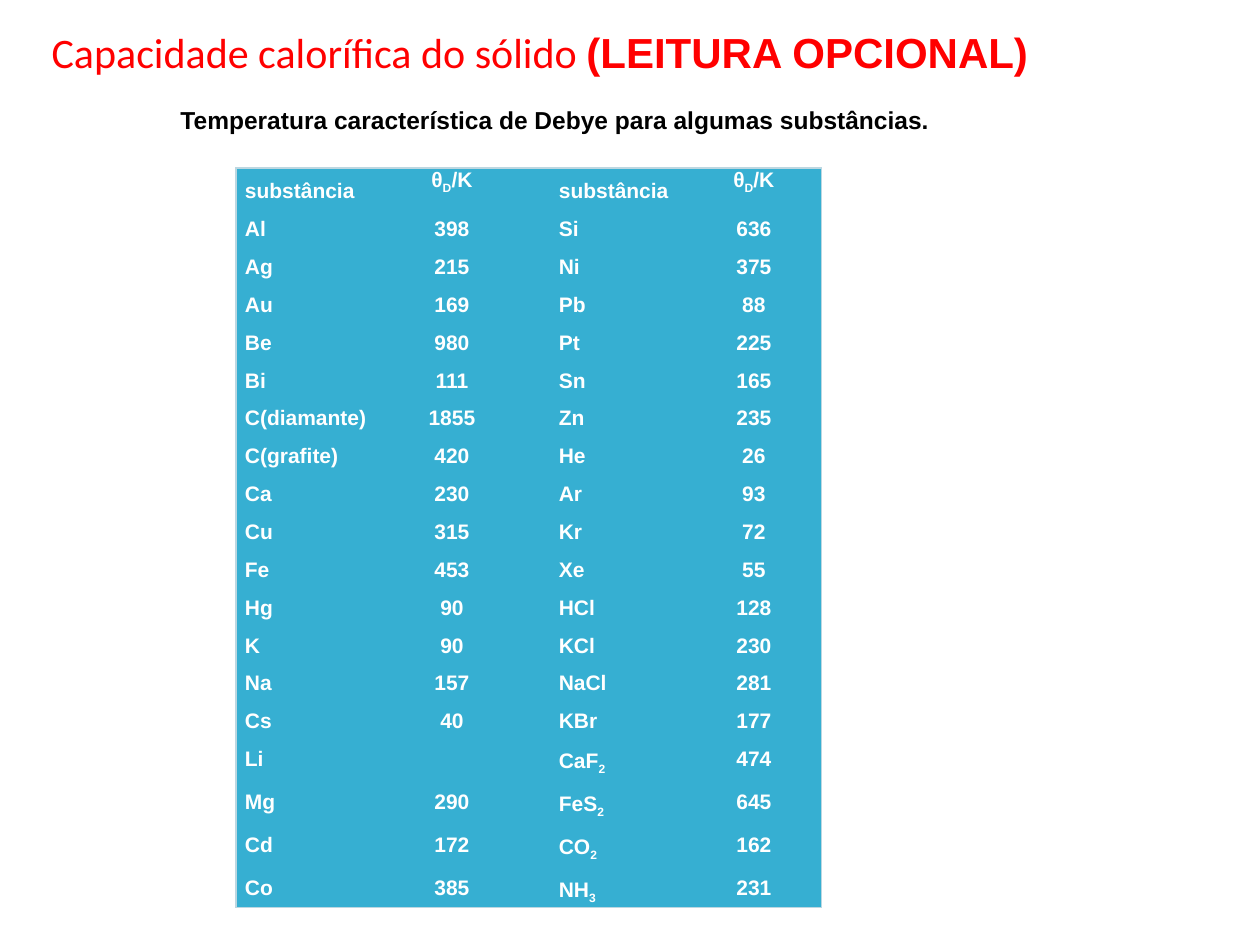
from dataclasses import dataclass

from lxml.etree import SubElement
from pptx import Presentation
from pptx.dml.color import RGBColor
from pptx.enum.text import MSO_ANCHOR, MSO_AUTO_SIZE, PP_ALIGN
from pptx.oxml.ns import qn
from pptx.util import Emu, Pt

PX = 914400 / 126
NO_STYLE = "{2D5ABB26-0587-4C30-8999-92F81FD0307C}"

HEADER = ["substância", "θ_D/K", "", "substância", "θ_D/K"]
LEFT_HALF = [
    ("Al", "398"), ("Ag", "215"), ("Au", "169"), ("Be", "980"), ("Bi", "111"),
    ("C(diamante)", "1855"), ("C(grafite)", "420"), ("Ca", "230"), ("Cu", "315"),
    ("Fe", "453"), ("Hg", "90"), ("K", "90"), ("Na", "157"), ("Cs", "40"),
    ("Li", ""), ("Mg", "290"), ("Cd", "172"), ("Co", "385"),
]
RIGHT_HALF = [
    ("Si", "636"), ("Ni", "375"), ("Pb", "88"), ("Pt", "225"), ("Sn", "165"),
    ("Zn", "235"), ("He", "26"), ("Ar", "93"), ("Kr", "72"), ("Xe", "55"),
    ("HCl", "128"), ("KCl", "230"), ("NaCl", "281"), ("KBr", "177"),
    ("CaF_2", "474"), ("FeS_2", "645"), ("CO_2", "162"), ("NH_3", "231"),
]
COLUMN_WIDTHS = [148, 136, 30, 136, 136]


def px(length):
    return Emu(round(length * PX))


@dataclass(frozen=True)
class Theme:
    title: str = "FF0000"
    text: str = "000000"
    cell_text: str = "FFFFFF"
    cell_fill: str = "36AFD2"
    border: str = "BCD7E1"
    title_size: int = 24
    subtitle_size: int = 14
    cell_size: int = 12
    heading_font: str = "Calibri"
    body_font: str = "Arial"


class SlideBuilder:
    def __init__(self, theme, slide):
        self.theme = theme
        self.slide = slide

    def span(self, para, text, color, **formats):
        span = para.add_run()
        span.text = text
        span.font.color.rgb = RGBColor.from_string(color)
        for name, value in formats.items():
            setattr(span.font, name, value)
        return span

    def frame(self, box, place, **formats):
        """Place a text box and return its first paragraph."""
        for name, length in zip(("left", "top", "width", "height"), place):
            setattr(box, name, px(length))
        for name, value in formats.items():
            setattr(box.text_frame, name, value)
        para = box.text_frame.paragraphs[0]
        para.alignment = PP_ALIGN.LEFT
        return para

    def title(self, place, plain, strong):
        theme = self.theme
        para = self.frame(self.slide.shapes.title, place, word_wrap=False,
                          auto_size=MSO_AUTO_SIZE.NONE,
                          vertical_anchor=MSO_ANCHOR.TOP)
        size = Pt(theme.title_size)
        self.span(para, plain, theme.title, size=size, name=theme.heading_font)
        self.span(para, strong, theme.title, size=size, name=theme.body_font, bold=True)

    def subtitle(self, place, text):
        theme = self.theme
        box = self.slide.shapes.add_textbox(0, 0, 0, 0)
        para = self.frame(box, place, word_wrap=False,
                          vertical_anchor=MSO_ANCHOR.MIDDLE)
        self.span(para, text, theme.text, size=Pt(theme.subtitle_size),
                  name=theme.body_font, bold=True)

    def table(self, left, top, widths, heights, rows):
        shape = self.slide.shapes.add_table(
            len(rows), len(widths), px(left), px(top), px(sum(widths)), sum(heights))
        table = shape.table
        table.first_row = table.horz_banding = False
        shape._element.find(".//" + qn("a:tableStyleId")).text = NO_STYLE
        for column, width in zip(table.columns, widths):
            column.width = px(width)
        last_row, last_column = len(rows) - 1, len(widths) - 1
        for r, texts in enumerate(rows):
            table.rows[r].height = heights[r]
            for c, text in enumerate(texts):
                cell = table.cell(r, c)
                edges = {"lnL": c == 0, "lnR": c == last_column,
                         "lnT": r == 0, "lnB": r == last_row}
                self.borders(cell, [tag for tag, outer in edges.items() if outer])
                self.cell(cell, text, c in (1, 4))

    def cell(self, cell, text, centred):
        """Fill a cell; the character after an underscore is a subscript."""
        theme = self.theme
        margins = {"margin_left": 9, "margin_right": 9,
                   "margin_top": 0, "margin_bottom": 0}
        for name, length in margins.items():
            setattr(cell, name, px(length))
        cell.fill.solid()
        cell.fill.fore_color.rgb = RGBColor.from_string(theme.cell_fill)
        para = cell.text_frame.paragraphs[0]
        para.font.size = Pt(theme.cell_size)
        para.alignment = PP_ALIGN.CENTER if centred else PP_ALIGN.JUSTIFY
        para.line_spacing = 1.0 if text.startswith("θ") else 1.5
        base, _, rest = text.partition("_")
        for part, baseline in ((base, 0), (rest[:1], -25000), (rest[1:], 0)):
            if part:
                span = self.span(para, part, theme.cell_text, bold=True,
                                 size=Pt(theme.cell_size), name=theme.body_font)
                if baseline:
                    span._r.get_or_add_rPr().set("baseline", str(baseline))

    def borders(self, cell, tags):
        properties = cell._tc.get_or_add_tcPr()
        for tag in tags:
            line = SubElement(properties, qn("a:" + tag), w=str(Pt(0.75)))
            fill = SubElement(line, qn("a:solidFill"))
            SubElement(fill, qn("a:srgbClr"), val=self.theme.border)


def main():
    deck = Presentation()
    deck.slide_width, deck.slide_height = px(1260), px(945)
    page = SlideBuilder(Theme(), deck.slides.add_slide(deck.slide_layouts[5]))
    page.title((39, 20, 1012, 158), "Capacidade calorífica do sólido ",
               "(LEITURA OPCIONAL)")
    page.subtitle((168, 98, 777, 43),
                  "Temperatura característica de Debye para algumas substâncias.")
    rows = [HEADER] + [[*left, "", *right]
                       for left, right in zip(LEFT_HALF, RIGHT_HALF)]
    # Rows that hold a chemical subscript are taller.
    heights = [px(567 / 15)] * 15 + [px(43)] * 4
    page.table(236, 168, COLUMN_WIDTHS, heights, rows)
    deck.save("out.pptx")


if __name__ == "__main__":
    main()
